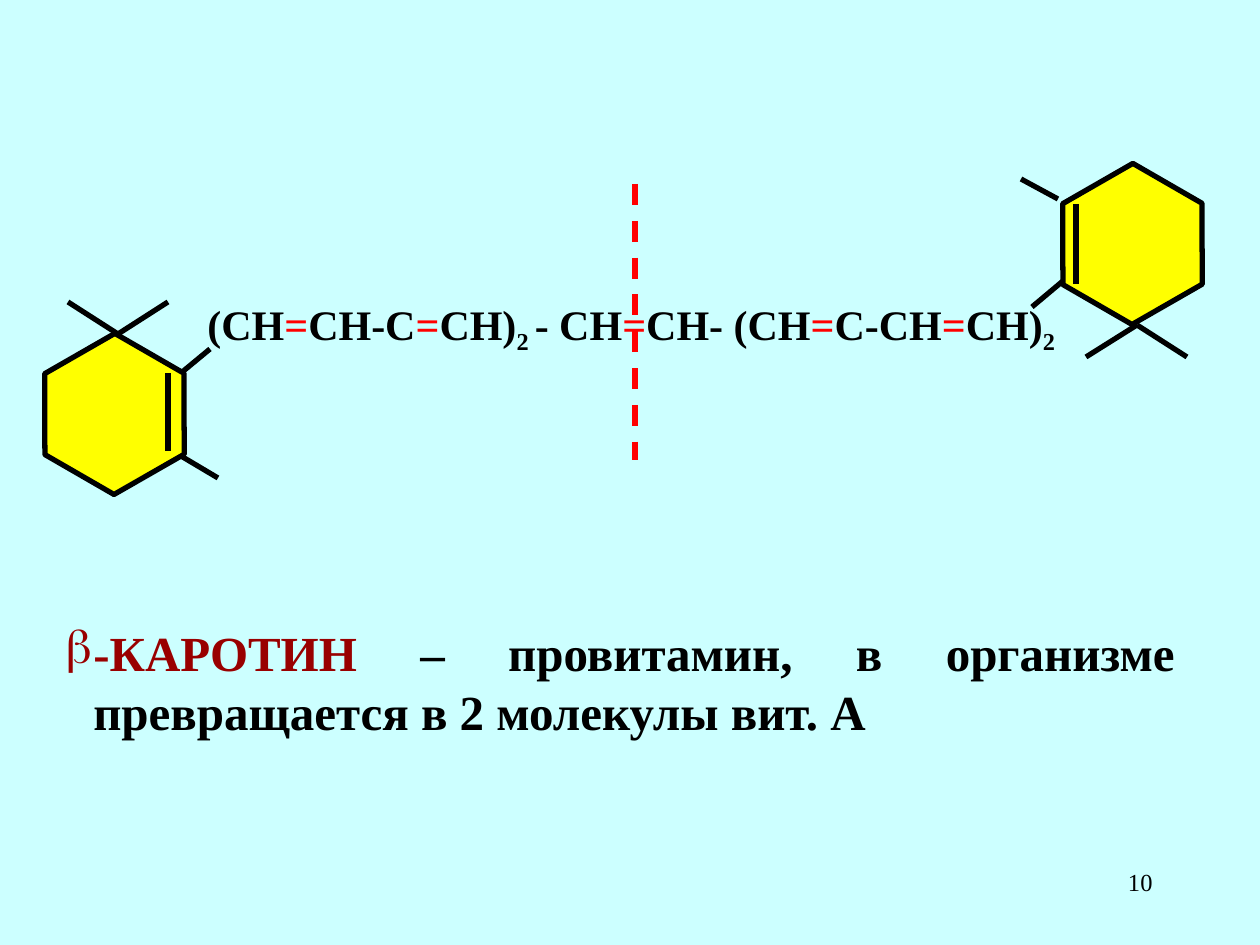
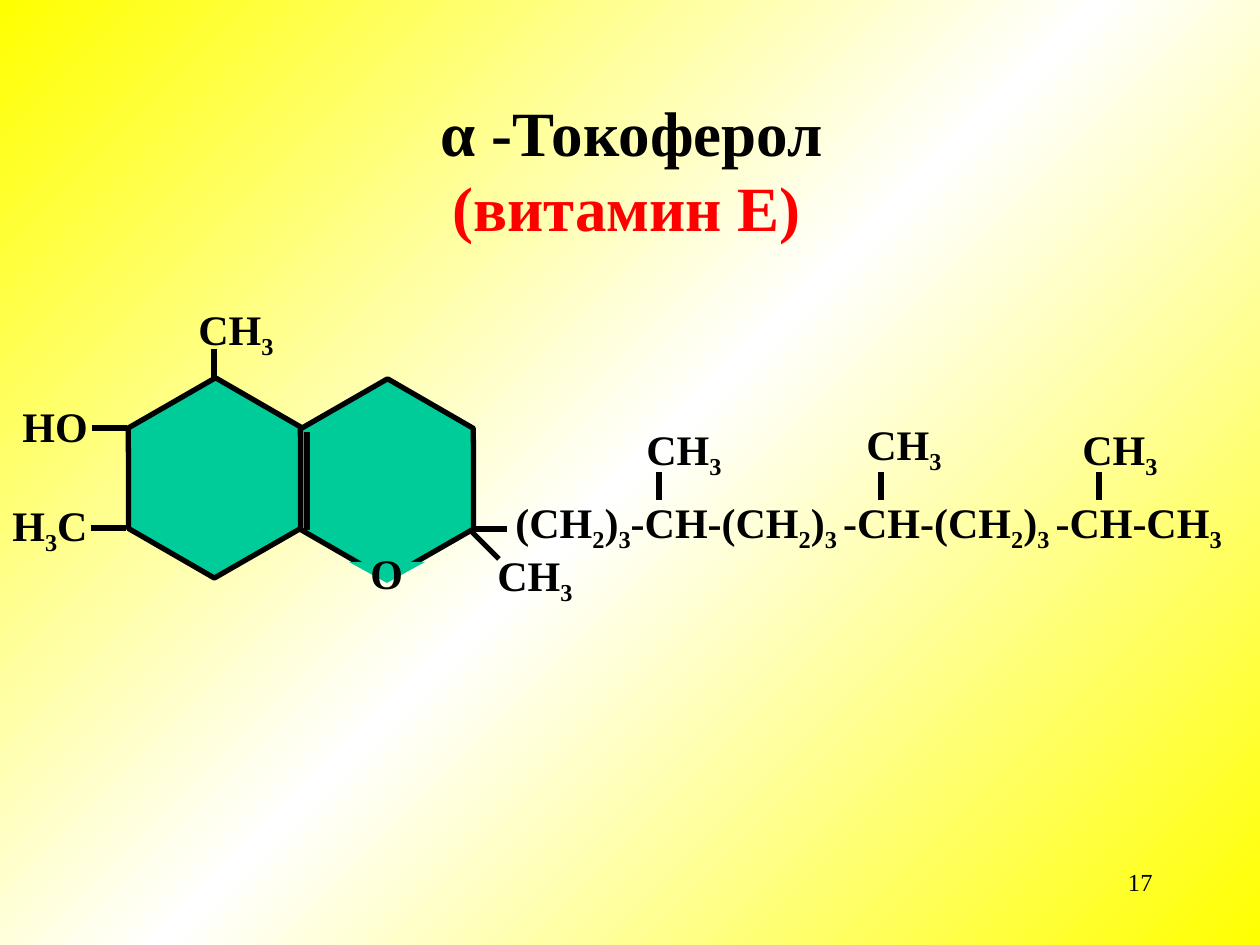
from itertools import groupby
from lxml import etree
from pptx import Presentation
from pptx.dml.color import RGBColor
from pptx.enum.dml import MSO_LINE
from pptx.enum.shapes import MSO_CONNECTOR, MSO_SHAPE
from pptx.enum.text import MSO_AUTO_SIZE as FIT, PP_ALIGN as ALIGN
from pptx.oxml.ns import qn
from pptx.util import Emu, Pt

BLACK, RED, CRIMSON = "000000", "FF0000", "990000"
YELLOW, WHITE, GREEN, SKY = "FFFF00", "FFFFFF", "00CC99", "CCFFFF"
FONT = "Times New Roman"
LABEL_H = 63
HANG = 28  # hanging indent of the bulleted paragraph

# Content: texts are (text, left, top, width), bonds are (x1, y1, x2, y2)
CAROTENE = {
    "number": "10",
    "rings": [(34, 344), (1052, 174)],
    "ring_size": (161, 140),
    "ring_fill": YELLOW,
    "bonds": [
        (181, 373, 210, 349), (1032, 307, 1063, 281),
        (118, 334, 68, 302), (118, 334, 168, 302),
        (168, 373, 168, 451), (181, 456, 218, 478),
        (1076, 204, 1076, 284), (1021, 179, 1058, 199),
        (1137, 325, 1086, 357), (1137, 325, 1187, 357),
    ],
    "formulas": [("(СН=СН-С=СН)2 - СН=СН- (СН=С-СН=СН)2", 195, 292, 877)],
}
CAROTENE_NOTE = [("-КАРОТИН ", CRIMSON, 28),
                 ("– провитамин, в организме превращается в 2 молекулы вит. А ", BLACK, 28)]
CLEAVAGE = (635, 184, 635, 460)

TOCOPHEROL = {
    "number": "17",
    "rings": [(115, 391), (287, 392)],
    "ring_size": (200, 174),
    "ring_fill": GREEN,
    "bonds": [
        (307, 432, 307, 530), (214, 349, 214, 378),
        (92, 428, 127, 428), (91, 528, 126, 528),
        (474, 529, 507, 529), (470, 530, 499, 559),
        *[(x, 472, x, 500) for x in (659, 881, 1099)],
    ],
    "formulas": [
        ("(СН2)3-СН-(СН2)3 -СН-(СН2)3 -СН-СН3", 503, 490, 746),
        ("НО", 10, 394, 91), ("Н3С", 0, 493, 102),
        *[("СН3", x, y, 102) for x, y in
          ((186, 297), (634, 417), (854, 412), (1070, 417), (485, 543))],
    ],
}
TOCOPHEROL_TITLE = [("α -Токоферол ", BLACK, 36), ("(витамин Е)", RED, 36), (" ", BLACK, 24)]


def px(value):
    return Emu(round(value * 914400 / 126))


def color(code):
    return RGBColor.from_string(code)


def add_span(para, text, code, size, bold=True, subscript=False):
    span = para.add_run()
    span.text = text
    for name, value in {"name": FONT, "size": Pt(size), "bold": bold}.items():
        setattr(span.font, name, value)
    span.font.color.rgb = color(code)
    if subscript:
        span.font._element.set("baseline", "-25000")


def add_text(page, spans, place, align=ALIGN.LEFT, wrap=True, fit=FIT.SHAPE_TO_FIT_TEXT, bold=True):
    box = page.shapes.add_textbox(*map(px, place))
    box.text_frame.word_wrap = wrap
    box.text_frame.auto_size = fit
    para = box.text_frame.paragraphs[0]
    para.alignment = align
    for text, code, size, *subscript in spans:
        add_span(para, text, code, size, bold, *subscript)
    return para


def formula_spans(formula):
    """Digits become subscripts, double bonds red; a space follows its neighbour."""
    kinds = []
    for char in formula:
        if char == " ":
            kinds.append(kinds[-1])
        else:
            kinds.append("sub" if char.isdigit() else "double" if char == "=" else "plain")
    for kind, pairs in groupby(zip(kinds, formula), key=lambda pair: pair[0]):
        text = "".join(char for _, char in pairs)
        yield text, RED if kind == "double" else BLACK, 24, kind == "sub"


def add_formula(page, formula, left, top, width):
    add_text(page, formula_spans(formula), (left, top, width, LABEL_H), wrap=False)


def add_figure(page, kind, place, fill):
    shape = page.shapes.add_shape(kind, *map(px, place))
    shape.shadow.inherit = False
    shape.fill.solid()
    shape.fill.fore_color.rgb = color(fill)
    shape.line.fill.background()
    return shape


def add_ring(page, place, fill):
    ring = add_figure(page, MSO_SHAPE.HEXAGON, place, fill)
    ring.adjustments[0] = 0.29
    ring.rotation = 30
    ring.line.color.rgb = color(BLACK)
    ring.line.width = Pt(3)


def add_bond(page, ends, code=BLACK):
    bond = page.shapes.add_connector(MSO_CONNECTOR.STRAIGHT, *map(px, ends))
    bond.line.color.rgb = color(code)
    bond.line.width = Pt(3)
    etree.SubElement(bond._element.spPr, qn("a:effectLst"))
    return bond


def add_molecule(deck, molecule):
    page = deck.slides.add_slide(deck.slide_layouts[6])
    add_text(page, [(molecule["number"], BLACK, 14)], (903, 861, 262, LABEL_H),
             ALIGN.RIGHT, fit=FIT.NONE, bold=False)
    for corner in molecule["rings"]:
        add_ring(page, corner + molecule["ring_size"], molecule["ring_fill"])
    for formula in molecule["formulas"]:
        add_formula(page, *formula)
    for ends in molecule["bonds"]:
        add_bond(page, ends)
    return page


def set_bullet(para, char, code):
    props = para._p.get_or_add_pPr()
    props.set("marL", str(px(HANG)))
    props.set("indent", str(-px(HANG)))
    tint = etree.SubElement(props, qn("a:buClr"))
    etree.SubElement(tint, qn("a:srgbClr"), val=code)
    etree.SubElement(props, qn("a:buChar"), char=char)


def set_gradient(page, codes):
    fill = page.background.fill
    fill.gradient()
    fill.gradient_angle = 315
    stops = fill._fill._gradFill.find(qn("a:gsLst"))
    for stop in list(stops):
        stops.remove(stop)
    for index, code in enumerate(codes):
        position = 100000 * index // (len(codes) - 1)
        stop = etree.SubElement(stops, qn("a:gs"), pos=str(position))
        etree.SubElement(stop, qn("a:srgbClr"), val=code)


def build_carotene(deck):
    page = add_molecule(deck, CAROTENE)
    page.background.fill.solid()
    page.background.fill.fore_color.rgb = color(SKY)
    note = add_text(page, CAROTENE_NOTE, (53, 616, 1134, 131), ALIGN.JUSTIFY)
    set_bullet(note, "β", CRIMSON)
    add_bond(page, CLEAVAGE, RED).line.dash_style = MSO_LINE.DASH


def build_tocopherol(deck):
    page = add_molecule(deck, TOCOPHEROL)
    set_gradient(page, [YELLOW, WHITE, YELLOW])
    add_text(page, TOCOPHEROL_TITLE, (305, 87, 654, 164), ALIGN.CENTER)
    # The oxygen atom sits in a gap cut out of the ring
    gap = add_figure(page, MSO_SHAPE.ISOSCELES_TRIANGLE, (349, 562, 76, 21), GREEN)
    gap._element.spPr.find(qn("a:xfrm")).set("flipV", "1")
    add_formula(page, "О", 358, 541, 58)


def main():
    deck = Presentation()
    deck.slide_width, deck.slide_height = px(1260), px(945)
    build_carotene(deck)
    build_tocopherol(deck)
    deck.save("out.pptx")


if __name__ == "__main__":
    main()
